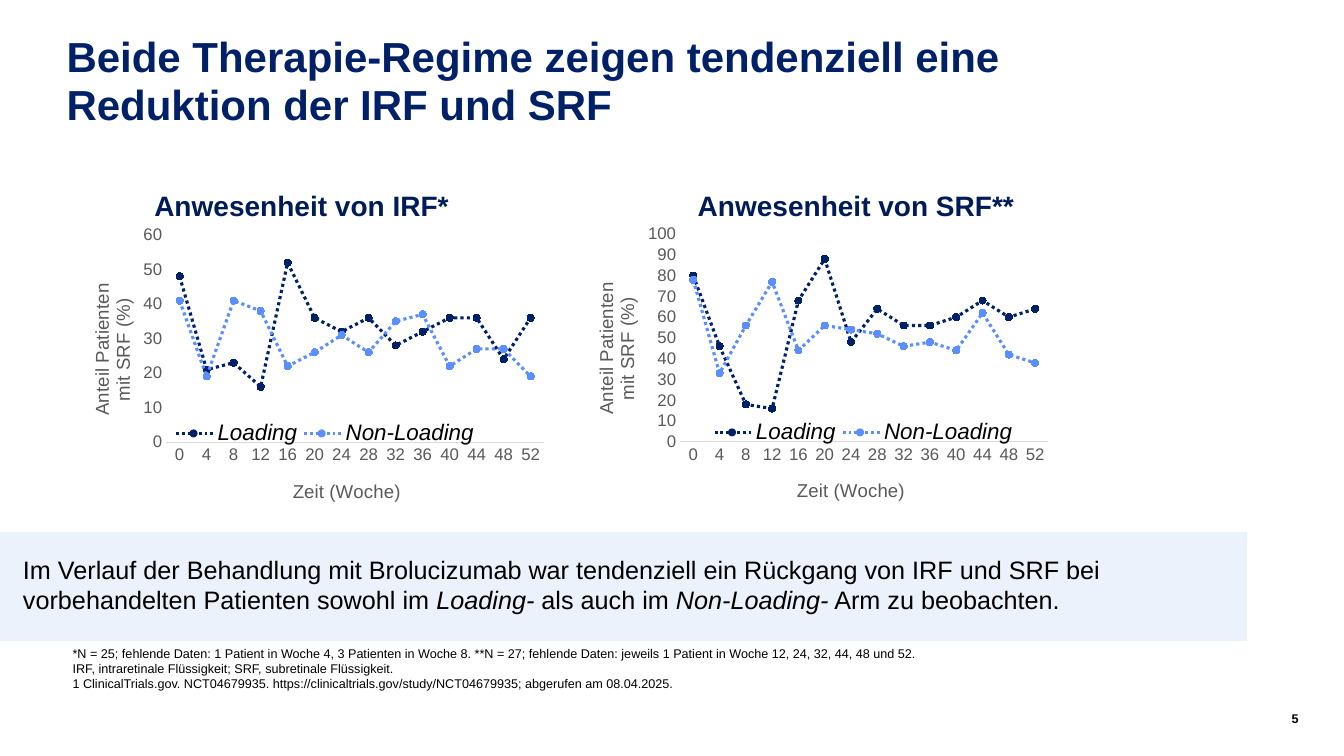
from dataclasses import dataclass

from lxml import etree
from pptx import Presentation
from pptx import util as u
from pptx.chart.data import CategoryChartData
from pptx.dml.color import RGBColor
from pptx.enum import chart as ch, dml, shapes, text
from pptx.oxml import parse_xml
from pptx.oxml.ns import nsdecls, qn

# Content
TITLE = "Beide Therapie-Regime zeigen tendenziell eine Reduktion der IRF und SRF"
WEEKS = [str(week) for week in range(0, 53, 4)]
ARMS = ["Loading", "Non-Loading"]
VALUE_TITLE = ["Anteil Patienten", "mit SRF (%)"]
TIME_TITLE = ["Zeit (Woche)"]
PANELS = [
    dict(heading="Anwesenheit von IRF*", heading_at=(1.53, 1.89, 2.97, 0.39),
         chart_at=(0.63, 2.19, 4.87, 2.96), top_value=60,
         plot=(0.209, 0.048, 0.77, 0.694), legend_at=(1.75, 4.30),
         values=[[48, 21, 23, 16, 52, 36, 32, 36, 28, 32, 36, 36, 24, 36],
                 [41, 19, 41, 38, 22, 26, 31, 26, 35, 37, 22, 27, 27, 19]]),
    dict(heading="Anwesenheit von SRF**", heading_at=(6.92, 1.89, 3.23, 0.39),
         chart_at=(5.63, 2.18, 4.87, 2.96), top_value=100,
         plot=(0.229, 0.048, 0.75, 0.697), legend_at=(7.09, 4.29),
         values=[[80, 46, 18, 16, 68, 88, 48, 64, 56, 56, 60, 68, 60, 64],
                 [78, 33, 56, 77, 44, 56, 54, 52, 46, 48, 44, 62, 42, 38]]),
]
# Each run: text, italic
MESSAGE = [
    ("Im Verlauf der Behandlung mit Brolucizumab war tendenziell ein Rückgang von "
     "IRF und SRF bei vorbehandelten Patienten sowohl im ", False),
    ("Loading-", True), (" als auch im ", False),
    ("Non-Loading-", True), (" Arm zu beobachten.", False),
]
FOOTNOTES = [
    "*N = 25; fehlende Daten: 1 Patient in Woche 4, 3 Patienten in Woche 8. "
    "**N = 27; fehlende Daten: jeweils 1 Patient in Woche 12, 24, 32, 44, 48 und 52.",
    "IRF, intraretinale Flüssigkeit; SRF, subretinale Flüssigkeit.",
    "1 ClinicalTrials.gov. NCT04679935. https://clinicaltrials.gov/study/NCT04679935; "
    "abgerufen am 08.04.2025.",
]
PAGE_NUMBER = "5"


@dataclass(frozen=True)
class Theme:
    font: str = "Arial"
    title: str = "002068"
    heading: str = "001C58"
    body: str = "000000"
    axis: str = "595959"
    axis_line: str = "D9D9D9"
    band: str = "EBF2FB"
    arms: tuple = ("002068", "5B8EFF")
    title_size: float = 30
    heading_size: float = 20
    message_size: float = 18
    legend_size: float = 16
    axis_title_size: float = 13.3
    axis_size: float = 12
    note_size: float = 9


theme = Theme()


# Helpers
def box(numbers):
    return [u.Inches(number) for number in numbers]


def style(font, size, color, bold=False, italic=False):
    font.name, font.size = theme.font, u.Pt(size)
    font.bold, font.italic = bold, italic
    font.color.rgb = RGBColor.from_string(color)


def set_frame(frame, inset=0, wrap=True):
    frame.word_wrap = wrap
    frame.auto_size = text.MSO_AUTO_SIZE.NONE
    frame.margin_left = frame.margin_right = u.Inches(inset)
    frame.margin_top = frame.margin_bottom = u.Inches(inset / 2)
    return frame


def add_text(at, lines, size, inset=0, wrap=True, **font):
    frame = set_frame(slide.shapes.add_textbox(*box(at)).text_frame, inset, wrap)
    frame.text = "\n".join(lines)
    for paragraph in frame.paragraphs:
        style(paragraph.font, size, theme.body, **font)
    return frame


def fill_placeholder(shape, at, words, size, color):
    shape.left, shape.top, shape.width, shape.height = box(at)
    frame = set_frame(shape.text_frame)
    frame.vertical_anchor = text.MSO_ANCHOR.TOP
    frame.text = words
    paragraph = frame.paragraphs[0]
    paragraph.alignment = text.PP_ALIGN.LEFT
    paragraph.line_spacing = 0.95
    paragraph.space_before = u.Pt(0)
    properties = paragraph._p.get_or_add_pPr()
    properties.set("marL", "0")
    properties.set("indent", "0")
    etree.SubElement(properties, qn("a:buNone"))
    style(paragraph.font, size, color, bold=True)


def add_filled(kind, at, color):
    shape = slide.shapes.add_shape(kind, *box(at))
    shape.shadow.inherit = False
    shape.fill.solid()
    shape.fill.fore_color.rgb = RGBColor.from_string(color)
    shape.line.fill.background()


def dot_line(line, color, width):
    line.color.rgb = RGBColor.from_string(color)
    line.width = u.Pt(width)
    line.dash_style = dml.MSO_LINE.ROUND_DOT


def manual_layout(**parts):
    entries = "".join(f'<c:{name} val="{value}"/>' for name, value in parts.items())
    return parse_xml(f"<c:layout {nsdecls('c')}><c:manualLayout>{entries}"
                     "</c:manualLayout></c:layout>")


def replace_layout(parent, layout, index):
    for old in parent.findall(qn("c:layout")):
        parent.remove(old)
    parent.insert(index, layout)


def style_axis(axis, lines, x, y):
    axis.has_major_gridlines = False
    axis.major_tick_mark = axis.minor_tick_mark = ch.XL_TICK_MARK.NONE
    style(axis.tick_labels.font, theme.axis_size, theme.axis)
    frame = axis.axis_title.text_frame
    frame.text = "\n".join(lines)
    for paragraph in frame.paragraphs:
        style(paragraph.font, theme.axis_title_size, theme.axis)
    replace_layout(axis.axis_title._element,
                   manual_layout(xMode="edge", yMode="edge", x=x, y=y), 1)
    return frame


def add_line_chart(panel):
    data = CategoryChartData(number_format="0")
    data.categories = WEEKS
    for arm, values in zip(ARMS, panel["values"]):
        data.add_series(arm, values)
    chart = slide.shapes.add_chart(ch.XL_CHART_TYPE.LINE_MARKERS,
                                   *box(panel["chart_at"]), data).chart
    chart.has_title = chart.has_legend = False
    style(chart.font, 10, theme.body)
    plot = chart.plots[0]
    plot.vary_by_categories = False
    x, y, w, h = panel["plot"]
    replace_layout(plot._element.getparent(), manual_layout(
        layoutTarget="inner", xMode="edge", yMode="edge", x=x, y=y, w=w, h=h), 0)

    style_axis(chart.category_axis, TIME_TITLE, 0.46, 0.856)
    axis_line = chart.category_axis.format.line
    axis_line.color.rgb = RGBColor.from_string(theme.axis_line)
    axis_line.width = u.Pt(0.75)
    value_axis = chart.value_axis
    value_frame = style_axis(value_axis, VALUE_TITLE, 0.048, 0.2)
    value_frame._txBody.bodyPr.set("rot", "-5400000")
    value_frame._txBody.bodyPr.set("vert", "horz")
    value_axis.format.line.fill.background()
    value_axis.minimum_scale, value_axis.maximum_scale = 0, panel["top_value"]
    value_axis.major_unit = 10

    for series, color in zip(plot.series, theme.arms):
        series.smooth = False
        dot_line(series.format.line, color, 2.25)
        series.marker.style, series.marker.size = ch.XL_MARKER_STYLE.CIRCLE, 5
        series.marker.format.fill.solid()
        for part in (series.marker.format.fill.fore_color, series.marker.format.line.color):
            part.rgb = RGBColor.from_string(color)


def add_legend(left, middle):
    for index, (arm, color) in enumerate(zip(ARMS, theme.arms)):
        x = left + 1.27 * index
        line = slide.shapes.add_connector(shapes.MSO_CONNECTOR.STRAIGHT,
                                          *box((x, middle, x + 0.39, middle)))
        etree.SubElement(line._element.spPr, qn("a:effectLst"))
        dot_line(line.line, color, 2)
        add_filled(shapes.MSO_SHAPE.OVAL, (x + 0.13, middle - 0.04, 0.08, 0.08), color)
        add_text((x + 0.31, middle - 0.2, 1 + 0.48 * index, 0.37), [arm],
                 theme.legend_size, inset=0.1, wrap=False, italic=True)


# Slide and title
presentation = Presentation()
presentation.slide_width, presentation.slide_height = box((13.33, 7.5))
slide = presentation.slides.add_slide(presentation.slide_layouts[3])
title, *headings = slide.placeholders
fill_placeholder(title, (0.66, 0.34, 11.37, 1.17), TITLE, theme.title_size, theme.title)

# Charts with headings and legends
for heading, panel in zip(headings, PANELS):
    fill_placeholder(heading, panel["heading_at"], panel["heading"],
                     theme.heading_size, theme.heading)
    add_line_chart(panel)
    add_legend(*panel["legend_at"])

# Key message
add_filled(shapes.MSO_SHAPE.RECTANGLE, (0, 5.28, 12.37, 1.08), theme.band)
message = add_text((0.13, 5.45, 12.63, 0.71), [""], theme.message_size, inset=0.1)
for words, italic in MESSAGE:
    run = message.paragraphs[0].add_run()
    run.text, run.font.italic = words, italic

# Footnotes and page number
notes = add_text((0.72, 6.41, 9.19, 0.45), FOOTNOTES, theme.note_size)
notes.vertical_anchor = text.MSO_ANCHOR.BOTTOM
number = add_text((12.37, 7.05, 0.51, 0.2), [PAGE_NUMBER], theme.note_size, bold=True)
number.paragraphs[0].alignment = text.PP_ALIGN.RIGHT

presentation.save("out.pptx")
